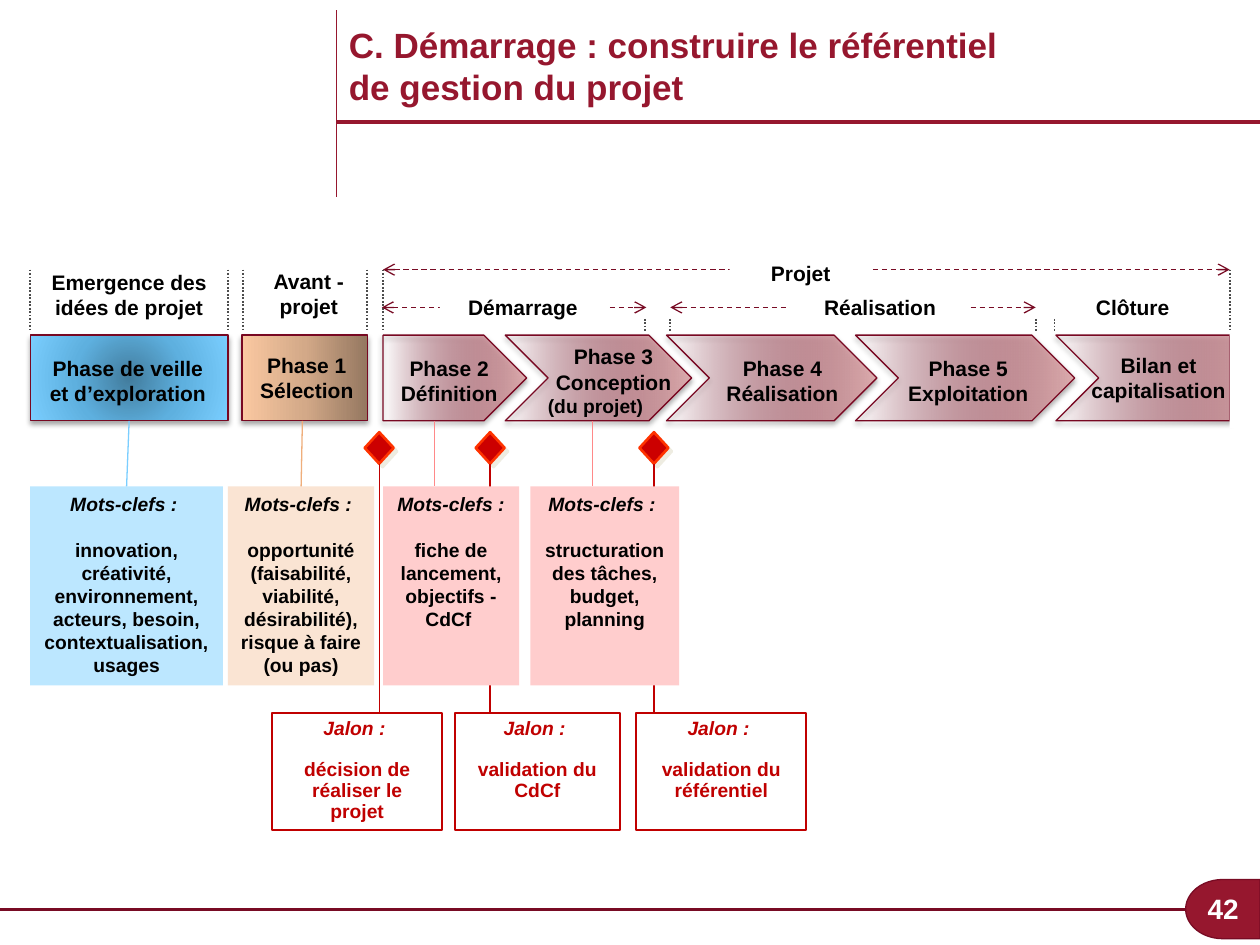
from lxml.etree import SubElement
from pptx import Presentation
from pptx.dml.color import RGBColor
from pptx.enum.dml import MSO_LINE as Dash
from pptx.enum.shapes import MSO_CONNECTOR as Link, MSO_SHAPE as Form
from pptx.enum.text import MSO_ANCHOR as Anchor, MSO_AUTO_SIZE as Fit, PP_ALIGN as Align
from pptx.oxml.ns import qn
from pptx.util import Inches, Pt

CELL = 0.1  # the slide is a grid of 100 columns by 75 rows
COLUMNS, ROWS = 100, 75
BOTTOM, TOP = 2, 0

BURGUNDY, DARK, EDGE, RED = "96172E", "780B24", "780822", "C00000"
PHASE_SHADOW = ("000000", 35, 3.1, 1.8, 90)
PHASE_TOP, PHASE_HEIGHT = 26.6, 6.8
ROSE = [(0, "83001E", 0), (100, "DCACAE", 100)]
BLUE = [(0, "427C9D", 100), (50, "5EB0DF", 100), (100, "7ACEFF", 100)]
ORANGE = [(0, "947760", 100), (50, "D3A988", 100), (100, "FAC8A1", 100)]


def grid(*cells):
    return [Inches(round(cell * CELL, 3)) for cell in cells]


def color(code):
    return RGBColor.from_string(code)


def set_line(line, code, width, dash=None):
    line.color.rgb = color(code)
    line.width = Pt(width)
    if dash:
        line.dash_style = dash


def add_color(parent, code, alpha):
    node = SubElement(parent, qn("a:srgbClr"), val=code)
    if alpha < 100:
        SubElement(node, qn("a:alpha"), val=str(alpha * 1000))


def add_shadow(properties, code, alpha, blur, distance, angle):
    effects = properties.find(qn("a:effectLst"))
    shadow = SubElement(effects, qn("a:outerShdw"), blurRad=str(Pt(blur)),
                        dist=str(Pt(distance)), dir=str(angle * 60000), rotWithShape="0")
    add_color(shadow, code, alpha)


def add_form(page, form, at, fill=None, line=None, shadow=None):
    shape = page.shapes.add_shape(form, *grid(*at))
    shape.shadow.inherit = False
    if fill:
        shape.fill.solid()
        shape.fill.fore_color.rgb = color(fill)
    else:
        shape.fill.background()
    if line:
        set_line(shape.line, *line)
    else:
        shape.line.fill.background()
    if shadow:
        add_shadow(shape._element.spPr, *shadow)
    return shape


def add_line(page, start, end, code, width, dash=None, arrows=False):
    link = page.shapes.add_connector(Link.STRAIGHT, *grid(*start, *end))
    set_line(link.line, code, width, dash)
    if arrows:
        outline = link._element.spPr.find(qn("a:ln"))
        for end_name in ("a:headEnd", "a:tailEnd"):
            SubElement(outline, qn(end_name), type="arrow")
    SubElement(link._element.spPr, qn("a:effectLst"))
    return link


def write(box, paragraphs, align=Align.CENTER, anchor=Anchor.TOP, wrap=True, fit=Fit.SHAPE_TO_FIT_TEXT,
          size=12, code="000000", spacing=None, gap=0):
    """Fill a box; with several paragraphs the first is an italic heading."""
    frame = box.text_frame
    for name, value in {"word_wrap": wrap, "auto_size": fit, "vertical_anchor": anchor}.items():
        setattr(frame, name, value)
    for index, text in enumerate(paragraphs):
        para = frame.add_paragraph() if index else frame.paragraphs[0]
        look = {"alignment": align, "line_spacing": spacing, "space_before": Pt(gap if index else 0)}
        for name, value in look.items():
            setattr(para, name, value)
        span = para.add_run()
        span.text = text
        style = {"name": "Arial", "size": Pt(size), "bold": True,
                 "italic": len(paragraphs) > 1 and index == 0}
        for name, value in style.items():
            setattr(span.font, name, value)
        span.font.color.rgb = color(code)


def add_text(page, at, text, **style):
    write(page.shapes.add_textbox(*grid(*at)), [text], **style)


def add_phase(page, form, left, width, stops, angle=0, radial=False):
    shape = add_form(page, form, (left, PHASE_TOP, width, PHASE_HEIGHT),
                     line=(EDGE, 0.75), shadow=PHASE_SHADOW)
    shape.fill.gradient()
    gradient = shape._element.spPr.find(qn("a:gradFill"))
    for child in list(gradient):
        gradient.remove(child)
    stop_list = SubElement(gradient, qn("a:gsLst"))
    for position, code, alpha in stops:
        add_color(SubElement(stop_list, qn("a:gs"), pos=str(position * 1000)), code, alpha)
    if radial:
        center = SubElement(gradient, qn("a:path"), path="circle")
        SubElement(center, qn("a:fillToRect"), dict.fromkeys("ltrb", "50000"))
    else:
        SubElement(gradient, qn("a:lin"), ang=str(angle * 60000), scaled="0")
    return shape


def add_span(page, start, end, row, label_at, text):
    """A dashed double arrow interrupted by its label."""
    add_line(page, (start, row), (end, row), DARK, 0.75, Dash.DASH, arrows=True)
    write(add_form(page, Form.RECTANGLE, label_at, "FFFFFF"), [text])


def add_milestone(page, center, left, width, text):
    diamond = add_form(page, Form.DIAMOND, (center - 1.15, 34.3, 2.3, 2.5), "CC0000",
                       ("FF3300", 1.5), ("EEECE1", 100, 0, 2.8, 45))
    stem = add_line(page, (center, 36.8), (center, 56.6), RED, 0.75)
    stem.begin_connect(diamond, BOTTOM)
    card = add_form(page, Form.RECTANGLE, (left, 56.6, width, 9.3), line=(RED, 1))
    write(card, ["Jalon : ", text], size=11, code=RED, spacing=0.9, gap=11.4)


def add_keywords(page, left, width, fill, text):
    card = add_form(page, Form.RECTANGLE, (left, 38.6, width, 15.8), fill)
    write(card, ["Mots-clefs : ", text], size=11, gap=12.65)
    return card


def add_frame(page):
    """Title, rules and page number."""
    add_line(page, (0, 72.2), (94.1, 72.2), DARK, 2)
    tab = add_form(page, Form.FLOWCHART_DELAY, (94.1, 69.8, 5.9, 4.7), BURGUNDY, (DARK, 0.75))
    tab.rotation = 180
    add_text(page, (76, 70.1, 23.3, 4), "42", align=Align.RIGHT, anchor=Anchor.MIDDLE,
             fit=Fit.NONE, size=16, code="FFFFFF")
    add_line(page, (26.7, 9.7), (COLUMNS, 9.7), BURGUNDY, 2.25)
    add_text(page, (26.7, 1.4, 53.8, 7.7), "C. Démarrage : construire le référentiel de gestion du projet",
             align=Align.LEFT, size=20, code=BURGUNDY)
    add_line(page, (26.7, 0.8), (26.7, 15.6), BURGUNDY, 1)


def main():
    deck = Presentation()
    deck.slide_width, deck.slide_height = grid(COLUMNS, ROWS)
    page = deck.slides.add_slide(deck.slide_layouts[6])
    add_frame(page)

    add_phase(page, Form.PENTAGON, 30.4, 11.4, ROSE)
    for left, width in [(40.1, 14.8), (52.9, 16.7), (67.9, 17.4), (83.8, 17.2)]:
        add_phase(page, Form.CHEVRON, left, width, ROSE)
    add_line(page, (97.6, 26.6), (97.6, 33.4), DARK, 0.75)
    add_form(page, Form.RECTANGLE, (97.6, 26.5, COLUMNS - 97.6, 7.5), "FFFFFF")
    watch = add_phase(page, Form.RECTANGLE, 2.4, 15.7, BLUE, radial=True)
    add_phase(page, Form.RECTANGLE, 19.2, 10, ORANGE, angle=180)

    for row, columns in {21.4: (2.4, 18.1, 19.3, 29.1, 30.4, 97.6),
                         25.3: (51.2, 53.2, 82.2, 83.7)}.items():
        for column in columns:
            add_line(page, (column, row), (column, 26.3), "4D4D4D", 1, Dash.ROUND_DOT)
    add_span(page, 30.4, 97.6, 21.4, (57.9, 20.2, 11.3, 3), "Projet")
    add_span(page, 30.3, 51.3, 24.4, (34.9, 22.9, 13.2, 3), "Démarrage")
    add_span(page, 53.2, 82.2, 24.4, (62.7, 22.9, 14.3, 3), "Réalisation")

    for left, top, width, text in [
        (3, 20.9, 14.5, "Emergence des idées de projet"),
        (20.4, 20.8, 8.2, "Avant - projet"),
        (2.9, 27.7, 14.5, "Phase de veille et d’exploration"),
        (18.8, 27.5, 11.1, "Phase 1 Sélection"),
        (30.1, 27.7, 11.1, "Phase 2 Définition"),
        (43, 26.8, 11.4, "Phase 3 Conception"),
        (56.4, 27.7, 11.4, "Phase 4 Réalisation"),
        (70.5, 27.7, 12.7, "Phase 5 Exploitation"),
        (85.6, 27.5, 12.7, "Bilan et capitalisation"),
    ]:
        add_text(page, (left, top, width, 5), text)
    add_text(page, (85.7, 22.9, 8.4, 3), "Clôture")
    add_text(page, (42.5, 30.8, 9.6, 2.9), "(du projet)", align=Align.LEFT, wrap=False, size=11)

    add_milestone(page, 30.1, 21.6, 13.5, "décision de réaliser le projet")
    add_milestone(page, 38.9, 36.1, 13.1, "validation du CdCf")
    add_milestone(page, 51.9, 50.5, 13.5, "validation du référentiel")

    ideas = add_keywords(page, 2.4, 15.3, "BCE7FF", "innovation, créativité, environnement, "
                         "acteurs, besoin, contextualisation, usages")
    choice = add_keywords(page, 18.1, 11.6, "FAE4D3", "opportunité (faisabilité, viabilité, "
                          "désirabilité), risque à faire (ou pas)")
    add_keywords(page, 30.4, 10.8, "FFCDCD", "fiche de lancement, objectifs - CdCf ")
    add_keywords(page, 42.1, 11.8, "FFCDCD", "structuration des tâches, budget, planning")
    stems = [add_line(page, (column, 33.4), (column, 38.6), code, 0.75)
             for column, code in [(10.2, "7ACEFF"), (24, "EFAE7B"), (34.5, "FF8989"), (47, "FF8989")]]
    stems[0].begin_connect(watch, BOTTOM)
    stems[0].end_connect(ideas, TOP)
    stems[1].end_connect(choice, TOP)

    deck.save("out.pptx")


if __name__ == "__main__":
    main()
